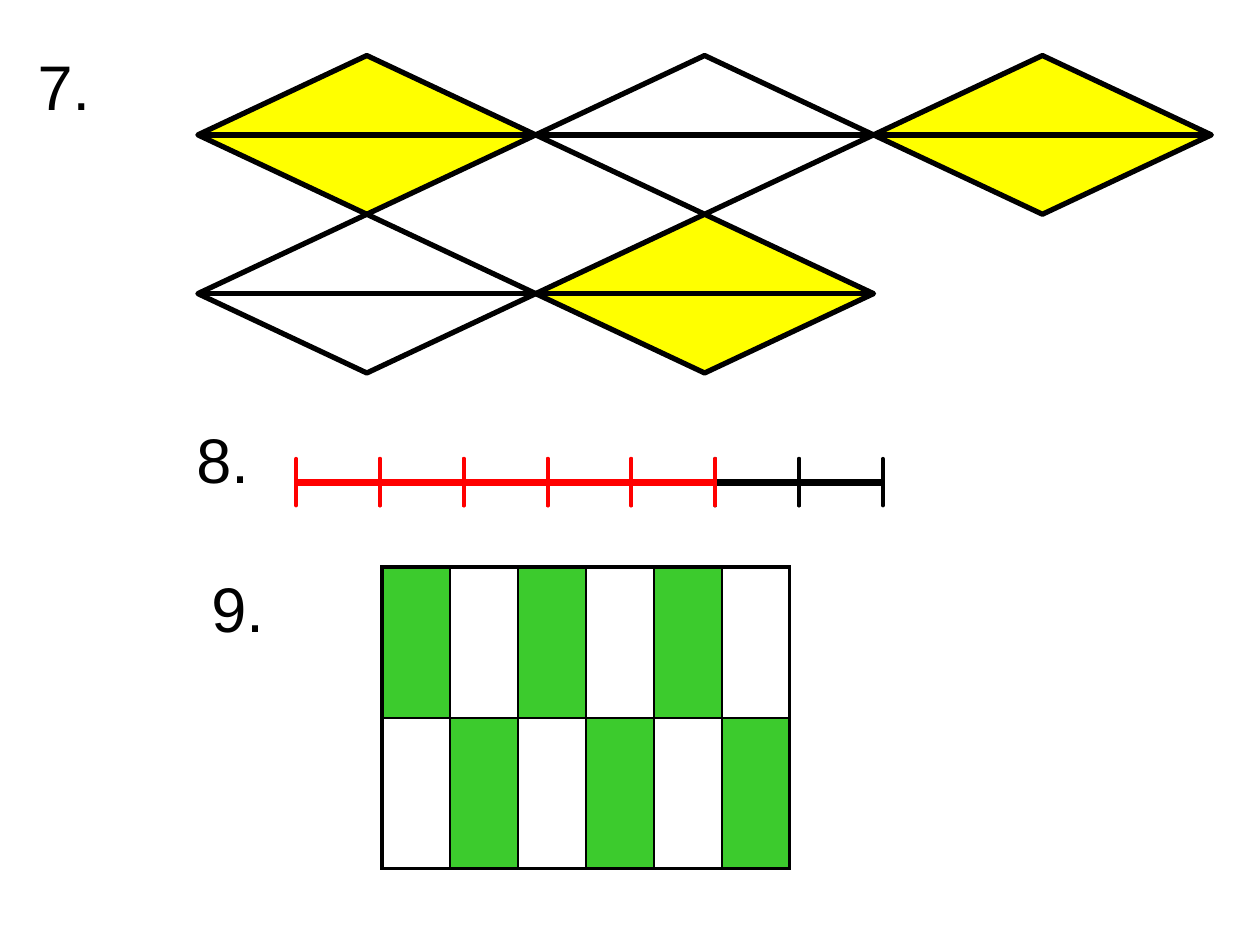
import lxml.etree
import pptx
import pptx.dml.color
import pptx.enum.shapes
import pptx.enum.text
import pptx.oxml.ns
import pptx.util
from pptx.util import Cm

BLACK = pptx.dml.color.RGBColor(0x00, 0x00, 0x00)
WHITE = pptx.dml.color.RGBColor(0xFF, 0xFF, 0xFF)
YELLOW = pptx.dml.color.RGBColor(0xFF, 0xFF, 0x00)
RED = pptx.dml.color.RGBColor(0xFF, 0x00, 0x00)
GREEN = pptx.dml.color.RGBColor(0x3C, 0xCB, 0x2D)

SHAPES = pptx.enum.shapes.MSO_SHAPE
ALIGN = pptx.enum.text.PP_ALIGN
qn = pptx.oxml.ns.qn


def add_number(page, text, left, top, width, height, align=ALIGN.LEFT):
    box = page.shapes.add_textbox(Cm(left), Cm(top), Cm(width), Cm(height))
    frame = box.text_frame
    frame.word_wrap = True
    frame.margin_top = Cm(0.25)
    frame.text = text
    para = frame.paragraphs[0]
    para.alignment = align
    properties = para._p.get_or_add_pPr()
    properties.set("marL", str(Cm(0.95)))
    properties.set("indent", str(-Cm(0.95)))
    span = para.runs[0]
    span.font.name = "Arial"
    span.font.size = pptx.util.Pt(36)
    span.font.color.rgb = BLACK


def style_shape(shape, fill, line, line_width):
    """Fill and outline a shape; a fill of None leaves it hollow."""
    shape.shadow.inherit = False
    if fill is None:
        shape.fill.background()
    else:
        shape.fill.solid()
        shape.fill.fore_color.rgb = fill
    shape.line.color.rgb = line
    shape.line.width = pptx.util.Pt(line_width)


def add_diagonal(page, diamond):
    """Draw the horizontal diagonal that halves a diamond."""
    middle = diamond.top + diamond.height // 2
    line = page.shapes.add_connector(
        pptx.enum.shapes.MSO_CONNECTOR.STRAIGHT,
        diamond.left, middle, diamond.left + diamond.width, middle)
    line.begin_connect(diamond, 1)
    line.end_connect(diamond, 3)
    line.line.color.rgb = BLACK
    line.line.width = pptx.util.Pt(3)
    lxml.etree.SubElement(line._element.spPr, qn("a:effectLst"))


def add_diamonds(page, rows, left, top, width, height):
    diamonds = []
    for row, fills in enumerate(rows):
        for column, fill in enumerate(fills):
            diamond = page.shapes.add_shape(
                SHAPES.FLOWCHART_DECISION,
                Cm(left + column * width), Cm(top + row * height),
                Cm(width), Cm(height))
            style_shape(diamond, fill, BLACK, 3)
            diamonds.append(diamond)
    for diamond in diamonds:
        add_diagonal(page, diamond)


def add_segments(page, total, marked, left, top, width, height):
    """Draw a divided line whose first marked parts are red."""
    group = page.shapes.add_group_shape()
    # Red parts come last so that the shared tick stays red.
    for index in reversed(range(total)):
        segment = group.shapes.add_shape(
            SHAPES.LEFT_RIGHT_ARROW,
            Cm(left + index * width), Cm(top), Cm(width), Cm(height))
        segment.adjustments[0] = 0.069
        segment.adjustments[1] = 0
        if index < marked:
            style_shape(segment, RED, RED, 2.25)
        else:
            style_shape(segment, None, BLACK, 2.25)


def set_border(cell, side, width):
    line = lxml.etree.SubElement(
        cell._tc.get_or_add_tcPr(), qn(f"a:ln{side}"),
        w=str(pptx.util.Pt(width)))
    fill = lxml.etree.SubElement(line, qn("a:solidFill"))
    lxml.etree.SubElement(fill, qn("a:srgbClr"), val=str(BLACK))


def add_checkerboard(page, rows, columns, left, top, cell_width, cell_height):
    table = page.shapes.add_table(
        rows, columns, Cm(left), Cm(top),
        Cm(columns * cell_width), Cm(rows * cell_height)).table
    table.first_row = False
    table.horz_banding = False
    for column in table.columns:
        column.width = Cm(cell_width)
    for row in range(rows):
        table.rows[row].height = Cm(cell_height)
        for column in range(columns):
            cell = table.cell(row, column)
            outer_sides = {"L": column == 0, "R": column == columns - 1,
                           "T": row == 0, "B": row == rows - 1}
            for side, is_outer in outer_sides.items():
                set_border(cell, side, 2.25 if is_outer else 1)
            if (row + column) % 2 == 0:
                cell.fill.solid()
                cell.fill.fore_color.rgb = GREEN
            else:
                cell.fill.background()


def main():
    deck = pptx.Presentation()
    deck.slide_width = Cm(25.4)
    deck.slide_height = Cm(19.05)
    page = deck.slides.add_slide(deck.slide_layouts[6])

    add_number(page, "7.", 0.51, 0.71, 1.6, 2)
    add_number(page, "8.", 3.71, 8.23, 1.8, 2.2)
    add_checkerboard(page, 2, 6, 7.7, 11.43, 1.37, 3.04)
    add_segments(page, 7, 5, 5.97, 9.25, 1.69, 0.94)
    add_number(page, "9.", 3.89, 11.23, 1.8, 2.2, ALIGN.CENTER)
    add_diamonds(page, [[YELLOW, WHITE, YELLOW], [WHITE, YELLOW]],
                 3.99, 1.12, 6.81, 3.2)
    deck.save("out.pptx")


if __name__ == "__main__":
    main()
